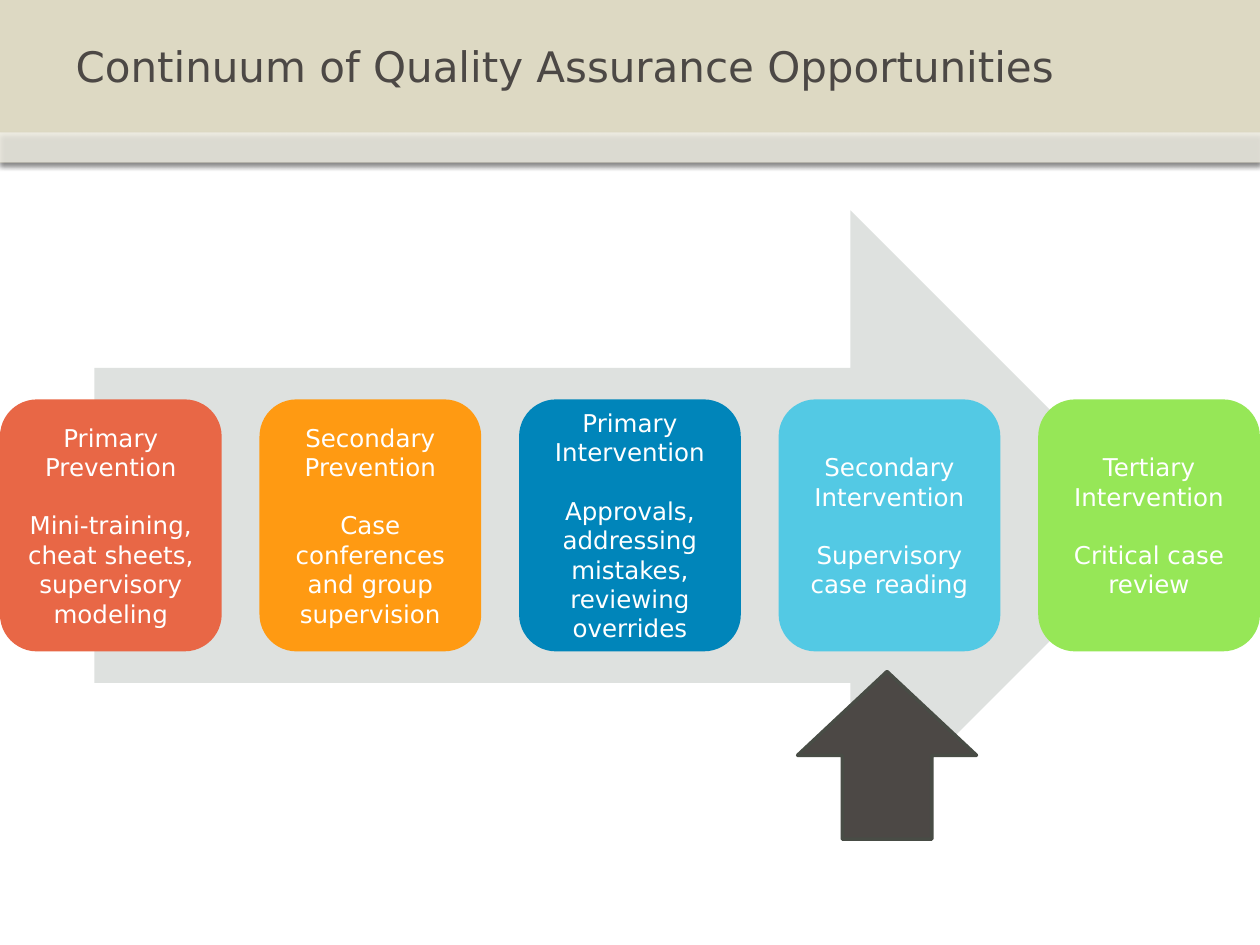
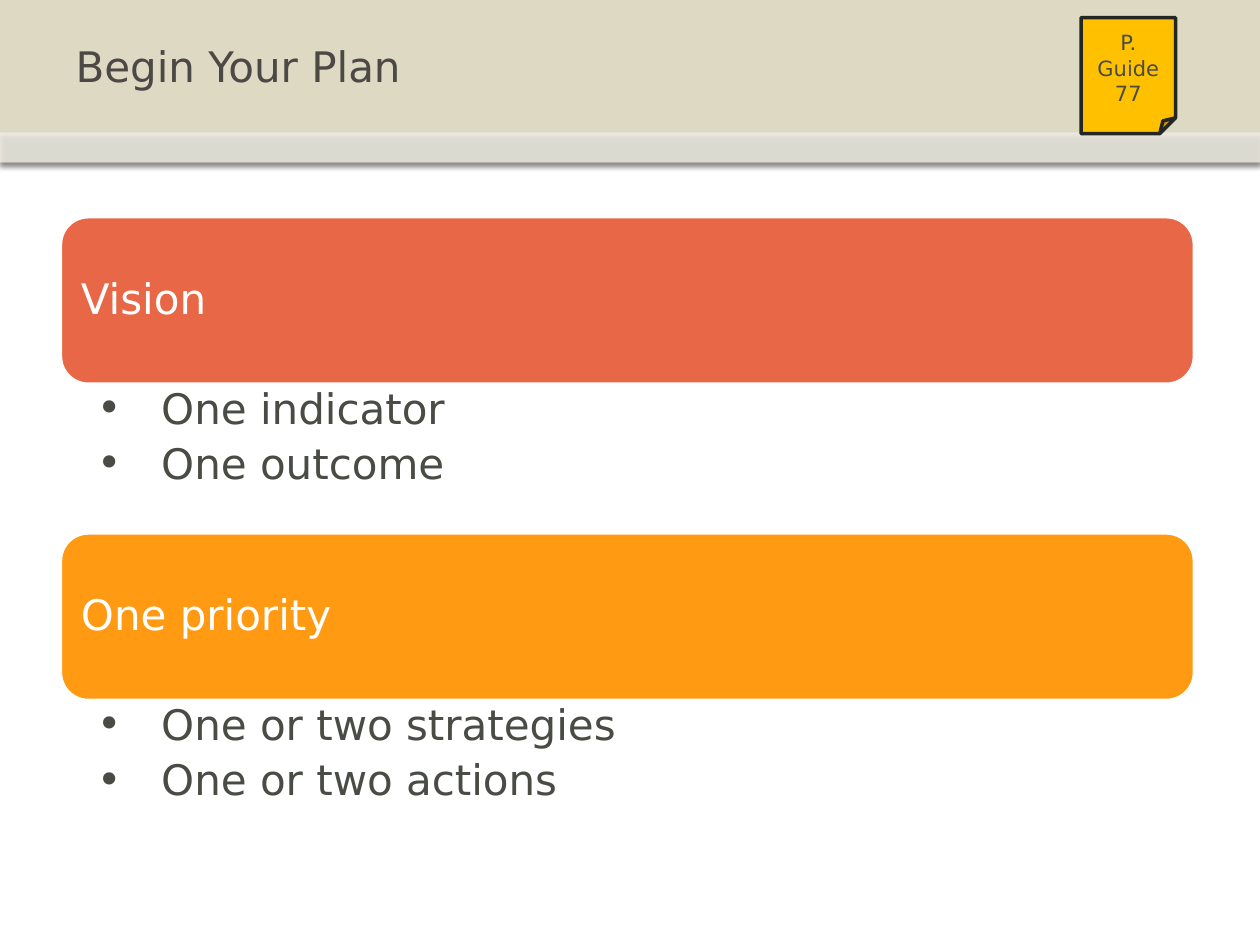
from lxml.etree import SubElement
from pptx import Presentation
from pptx.dml.color import RGBColor
from pptx.enum.shapes import MSO_SHAPE
from pptx.enum.text import MSO_ANCHOR, PP_ALIGN
from pptx.oxml.ns import qn
from pptx.util import Inches, Pt

FONT = "DejaVu Sans"
WHITE = RGBColor(0xFF, 0xFF, 0xFF)
BLACK = RGBColor(0x00, 0x00, 0x00)
SAND = RGBColor(0xDD, 0xD9, 0xC3)
BROWN = RGBColor(0x4C, 0x48, 0x45)
SLATE = RGBColor(0x48, 0x4C, 0x45)
INK = RGBColor(0x24, 0x26, 0x22)
SILVER = RGBColor(0xDE, 0xE1, 0xDF)
CORAL = RGBColor(0xE8, 0x67, 0x46)
ORANGE = RGBColor(0xFF, 0x9A, 0x12)
BLUE = RGBColor(0x00, 0x85, 0xBA)
SKY = RGBColor(0x53, 0xC9, 0xE4)
GREEN = RGBColor(0x96, 0xE7, 0x57)
GOLD = RGBColor(0xFF, 0xC0, 0x00)

STAGES = [
    ("Primary Prevention", "Mini-training, cheat sheets, supervisory modeling", CORAL),
    ("Secondary Prevention", "Case conferences and group supervision", ORANGE),
    ("Primary Intervention", "Approvals, addressing mistakes, reviewing overrides", BLUE),
    ("Secondary Intervention", "Supervisory case reading", SKY),
    ("Tertiary Intervention", "Critical case review", GREEN),
]
PLAN = [
    ("Vision", ["One indicator", "One outcome"], CORAL),
    ("One priority", ["One or two strategies", "One or two actions"], ORANGE),
]


class DeckBuilder:
    def __init__(self):
        self.deck = Presentation()
        self.deck.slide_width = Inches(10)
        self.deck.slide_height = Inches(7.5)
        self.page = None

    def add_page(self, title):
        self.page = self.deck.slides.add_slide(self.deck.slide_layouts[5])
        self.band(0, 1.29, SAND)
        self.band(1.05, 0.24, WHITE, opacity=53)
        box = self.page.shapes.title
        box.left, box.top, box.width, box.height = map(Inches, (0.5, 0, 9, 1.05))
        self.page.shapes._spTree.append(box._element)
        self.add_text(box, [title], 24, BROWN, align=PP_ALIGN.LEFT)

    def shape(self, kind, left, top, width, height, fill, line=None, line_width=2):
        box = self.page.shapes.add_shape(
            kind, Inches(left), Inches(top), Inches(width), Inches(height))
        box.shadow.inherit = False
        box.fill.solid()
        box.fill.fore_color.rgb = fill
        if line is None:
            box.line.fill.background()
        else:
            box.line.color.rgb = line
            box.line.width = Pt(line_width)
        return box

    def band(self, top, height, fill, opacity=100):
        box = self.shape(MSO_SHAPE.RECTANGLE, 0, top, 10, height, fill)
        properties = box._element.spPr
        if opacity < 100:
            color = properties.find(qn("a:solidFill")).find(qn("a:srgbClr"))
            SubElement(color, qn("a:alpha"), val=str(opacity * 1000))
        shadow = SubElement(
            properties.find(qn("a:effectLst")), qn("a:outerShdw"),
            blurRad=str(Pt(3.1)), dist=str(Pt(1.8)), dir=str(90 * 60000), rotWithShape="0")
        color = SubElement(shadow, qn("a:srgbClr"), val=str(BLACK))
        SubElement(color, qn("a:alpha"), val="35000")

    def add_text(self, box, lines, size, color, align=PP_ALIGN.CENTER,
                 anchor=MSO_ANCHOR.MIDDLE, insets=(0.1, 0.05, 0.1, 0.05),
                 gap=0, line_spacing=None, bullets=False):
        frame = box.text_frame
        frame.word_wrap = True
        frame.vertical_anchor = anchor
        (frame.margin_left, frame.margin_top,
         frame.margin_right, frame.margin_bottom) = map(Inches, insets)
        for index, line in enumerate(lines):
            para = frame.add_paragraph() if index else frame.paragraphs[0]
            if bullets:
                self.bullet(para)
            para.alignment = align
            if line_spacing:
                para.line_spacing = line_spacing
            if index and gap:
                para.space_before = Pt(gap)
            span = para.add_run()
            span.text = line
            span.font.name = FONT
            span.font.size = Pt(size)
            span.font.color.rgb = color

    def bullet(self, para):
        properties = para._p.get_or_add_pPr()
        properties.set("marL", str(Inches(0.51)))
        properties.set("indent", str(-Inches(0.51)))
        SubElement(properties, qn("a:buFont"), typeface=FONT)
        SubElement(properties, qn("a:buChar"), char="•")

    def bullet_list(self, left, top, width, height, lines):
        box = self.page.shapes.add_textbox(
            Inches(left), Inches(top), Inches(width), Inches(height))
        self.add_text(box, lines, 24, SLATE, align=PP_ALIGN.LEFT, anchor=MSO_ANCHOR.TOP,
                      insets=(0.29, 0.03, 0.19, 0.03), gap=5.6, line_spacing=0.9,
                      bullets=True)

    def continuum(self):
        self.add_page("Continuum of Quality Assurance Opportunities")
        self.shape(MSO_SHAPE.RIGHT_ARROW, 0.75, 1.67, 8.5, 5, SILVER)
        width = 1.76
        pitch = (10 - width) / (len(STAGES) - 1)
        for index, (stage, activity, color) in enumerate(STAGES):
            card = self.shape(
                MSO_SHAPE.ROUNDED_RECTANGLE, index * pitch, 3.17, width, 2, color)
            self.add_text(card, [stage, activity], 14, WHITE, insets=(0.06,) * 4, gap=16.5)
        self.shape(MSO_SHAPE.UP_ARROW, 6.33, 5.33, 1.42, 1.33, BROWN, line=SLATE)

    def plan(self):
        self.add_page("Begin Your Plan")
        left, width, bar_height, list_height = 0.48, 9, 1.33, 1.18
        for index, (heading, items, color) in enumerate(PLAN):
            top = 1.72 + index * (bar_height + list_height)
            bar = self.shape(MSO_SHAPE.ROUNDED_RECTANGLE, left, top, width, bar_height,
                             color, line=WHITE)
            self.add_text(bar, [heading], 24, WHITE, align=PP_ALIGN.LEFT,
                          insets=(0.1,) * 4, line_spacing=0.9)
            self.bullet_list(left, top + bar_height, width, list_height, items)
        note = self.shape(MSO_SHAPE.FOLDED_CORNER, 8.58, 0.14, 0.75, 0.92, GOLD, line=INK)
        self.add_text(note, ["P. Guide", "77"], 12, SLATE)


def main():
    builder = DeckBuilder()
    builder.continuum()
    builder.plan()
    builder.deck.save("out.pptx")


if __name__ == "__main__":
    main()
